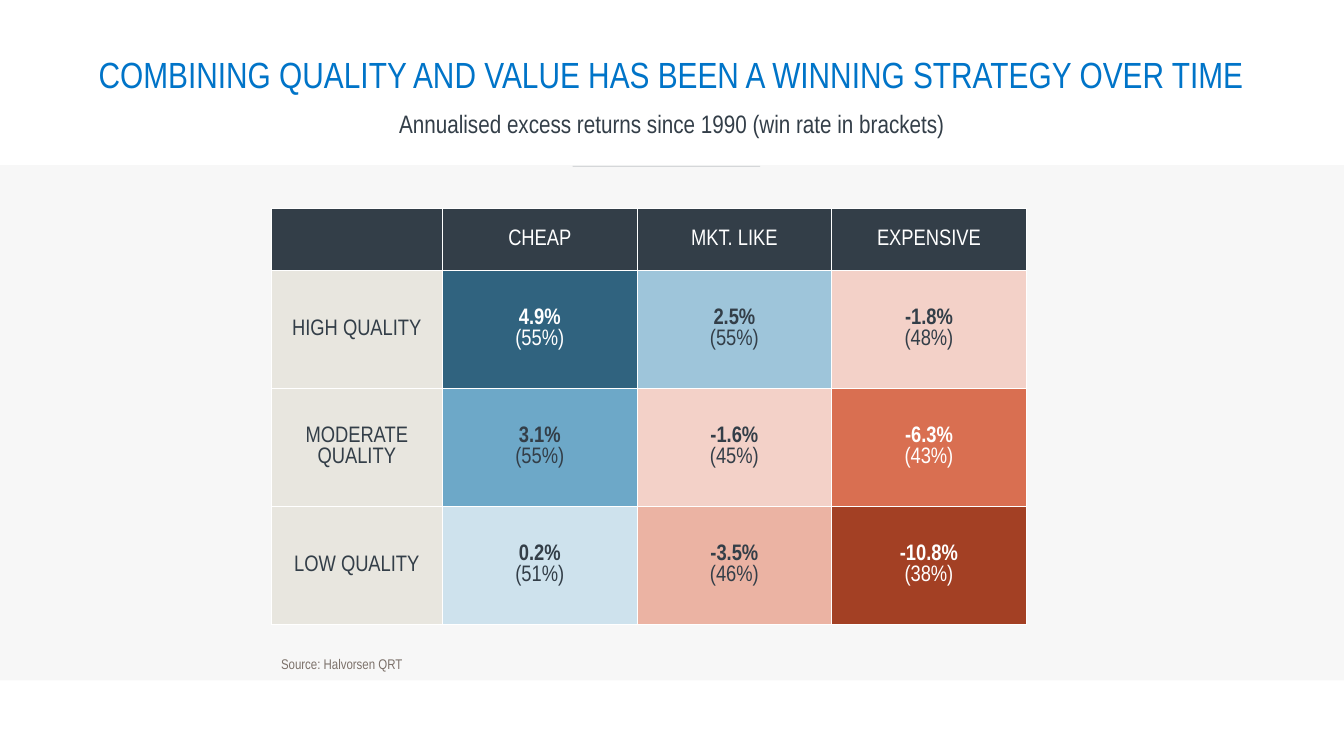
import pptx
import pptx.util
import pptx.dml.color
import pptx.enum.shapes
import pptx.enum.text
import pptx.oxml
import pptx.oxml.ns
from lxml import etree

Pt = pptx.util.Pt
ALIGN = pptx.enum.text.PP_ALIGN
MIDDLE = pptx.enum.text.MSO_ANCHOR.MIDDLE
qn = pptx.oxml.ns.qn

FACE = "Arial Narrow"
WIDE, HIGH = 960, 540
HUES = {
    "blue": "0074C8", "ink": "333E48", "white": "FFFFFF", "taupe": "7C716A",
    "band": "E6E6E6", "label": "E8E6DF",
    "deep": "30637F", "mid": "6DA8C8", "soft": "9EC5DA", "pale": "CEE2ED",
    "blush": "F3D1C8", "rose": "EBB3A3", "coral": "D96F51", "rust": "A34024",
}
HEADS = ["", "CHEAP", "MKT. LIKE", "EXPENSIVE"]
# Each value: return, win rate, fill, text colour
ROWS = [
    ("HIGH QUALITY", [("4.9%", "(55%)", "deep", "white"),
                      ("2.5%", "(55%)", "soft", "ink"),
                      ("-1.8%", "(48%)", "blush", "ink")]),
    ("MODERATE QUALITY", [("3.1%", "(55%)", "mid", "ink"),
                          ("-1.6%", "(45%)", "blush", "ink"),
                          ("-6.3%", "(43%)", "coral", "white")]),
    ("LOW QUALITY", [("0.2%", "(51%)", "pale", "ink"),
                     ("-3.5%", "(46%)", "rose", "ink"),
                     ("-10.8%", "(38%)", "rust", "white")]),
]


def rgb(hue):
    return pptx.dml.color.RGBColor.from_string(HUES[hue])


def fade(fill, share):
    """Make a solid fill see-through, with share as percent opaque."""
    tint = fill._xPr.find(".//" + qn("a:srgbClr"))
    etree.SubElement(tint, qn("a:alpha"), val=str(share * 1000))


def style(frame, size, hue, align=ALIGN.CENTER):
    for para in frame.paragraphs:
        para.alignment = align
        for run in para.runs:
            run.font.name = FACE
            run.font.size = Pt(size)
            run.font.color.rgb = rgb(hue)


def draw_back(slide, left, top, width, height):
    # Grey band
    band = slide.shapes.add_shape(pptx.enum.shapes.MSO_SHAPE.RECTANGLE,
                                  Pt(left), Pt(top), Pt(width), Pt(height))
    band.shadow.inherit = False
    band.fill.solid()
    band.fill.fore_color.rgb = rgb("band")
    fade(band.fill, 30)
    band.line.fill.background()

    # Short rule on the band's top edge
    start, end, y = left + 409, left + 543, top + 0.7
    rule = slide.shapes.add_connector(pptx.enum.shapes.MSO_CONNECTOR.STRAIGHT,
                                      Pt(end), Pt(y), Pt(start), Pt(y))
    rule.line.width = Pt(0.5)
    rule.line.color.rgb = rgb("ink")
    fade(rule.line.fill, 26)
    etree.SubElement(rule._element.spPr, qn("a:effectLst"))


def draw_head(slide, left, top, width):
    # Title
    title = slide.shapes.title
    title.left, title.top = Pt(left), Pt(top)
    title.width, title.height = Pt(width), Pt(39)
    title.text_frame.text = ("COMBINING QUALITY AND VALUE HAS BEEN "
                             "A WINNING STRATEGY OVER TIME")
    style(title.text_frame, 26, "blue")

    # Subtitle
    inset = 66
    sub = slide.shapes.add_textbox(Pt(left + inset), Pt(top + 40.3),
                                   Pt(width - 2 * inset), Pt(27.4))
    sub.text_frame.word_wrap = True
    sub.text_frame.text = "Annualised excess returns since 1990 (win rate in brackets)"
    style(sub.text_frame, 18, "ink")

    for frame in (title.text_frame, sub.text_frame):
        frame.vertical_anchor = MIDDLE
        frame.paragraphs[0].line_spacing = 0.9


def edge(cell):
    """Give a cell thin white borders, ahead of its fill."""
    props = cell._tc.get_or_add_tcPr()
    for spot, side in enumerate("LRTB"):
        line = etree.Element(qn("a:ln" + side), w=str(Pt(1)))
        solid = etree.SubElement(line, qn("a:solidFill"))
        etree.SubElement(solid, qn("a:srgbClr"), val=HUES["white"])
        props.insert(spot, line)


def set_cell(cell, text, fill, hue):
    cell.fill.solid()
    cell.fill.fore_color.rgb = rgb(fill)
    edge(cell)
    cell.vertical_anchor = MIDDLE
    cell.text_frame.text = text
    style(cell.text_frame, 16, hue)


def draw_grid(slide, left, top, width, height):
    first, head = 122.4, 44
    grid = slide.shapes.add_table(len(ROWS) + 1, len(HEADS), Pt(left), Pt(top),
                                  Pt(width), Pt(height)).table
    grid.horz_banding = False
    for i, col in enumerate(grid.columns):
        col.width = Pt((width - first) / (len(HEADS) - 1) if i else first)
    for i, row in enumerate(grid.rows):
        row.height = Pt((height - head) / len(ROWS) if i else head)

    # Header row
    for c, text in enumerate(HEADS):
        set_cell(grid.cell(0, c), text, "ink", "white")

    # Quality rows
    for r, (label, values) in enumerate(ROWS, 1):
        set_cell(grid.cell(r, 0), label, "label", "ink")
        for c, (gain, rate, fill, hue) in enumerate(values, 1):
            cell = grid.cell(r, c)
            set_cell(cell, gain + "\n" + rate, fill, hue)
            cell.text_frame.paragraphs[0].runs[0].font.bold = True


def draw_note(slide, left, top, width, height):
    note = slide.shapes.add_textbox(Pt(left), Pt(top), Pt(width), Pt(height))
    note.text_frame.word_wrap = True
    note.text_frame.text = "Source: Halvorsen QRT"
    style(note.text_frame, 10, "taupe", ALIGN.LEFT)


def main():
    deck = pptx.Presentation()
    deck.slide_width, deck.slide_height = Pt(WIDE), Pt(HIGH)
    slide = deck.slides.add_slide(deck.slide_layouts[5])
    draw_back(slide, 0, 118, WIDE, 368)
    draw_head(slide, 0, 35.3, WIDE)
    draw_grid(slide, 193.7, 149, 539.4, 297.2)
    draw_note(slide, 193.7, 464.4, 331, 19.4)
    deck.save("out.pptx")


if __name__ == "__main__":
    main()
